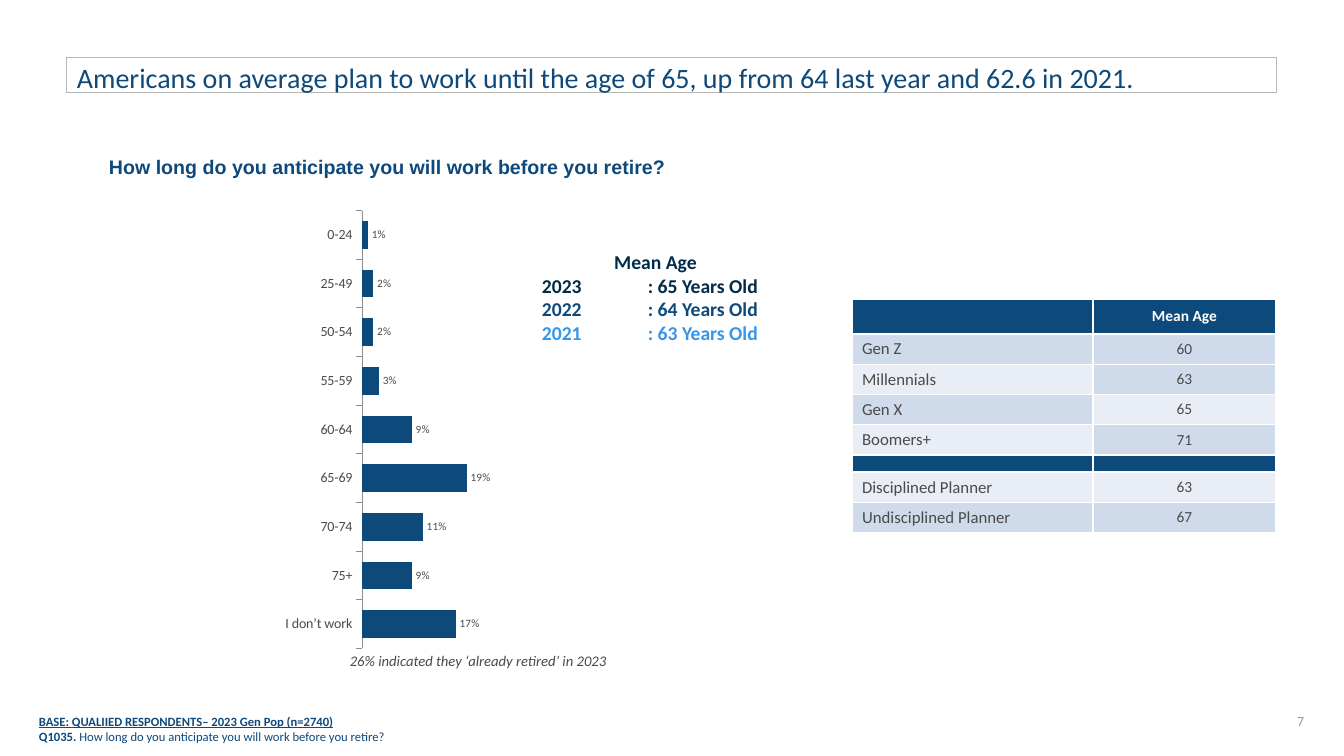
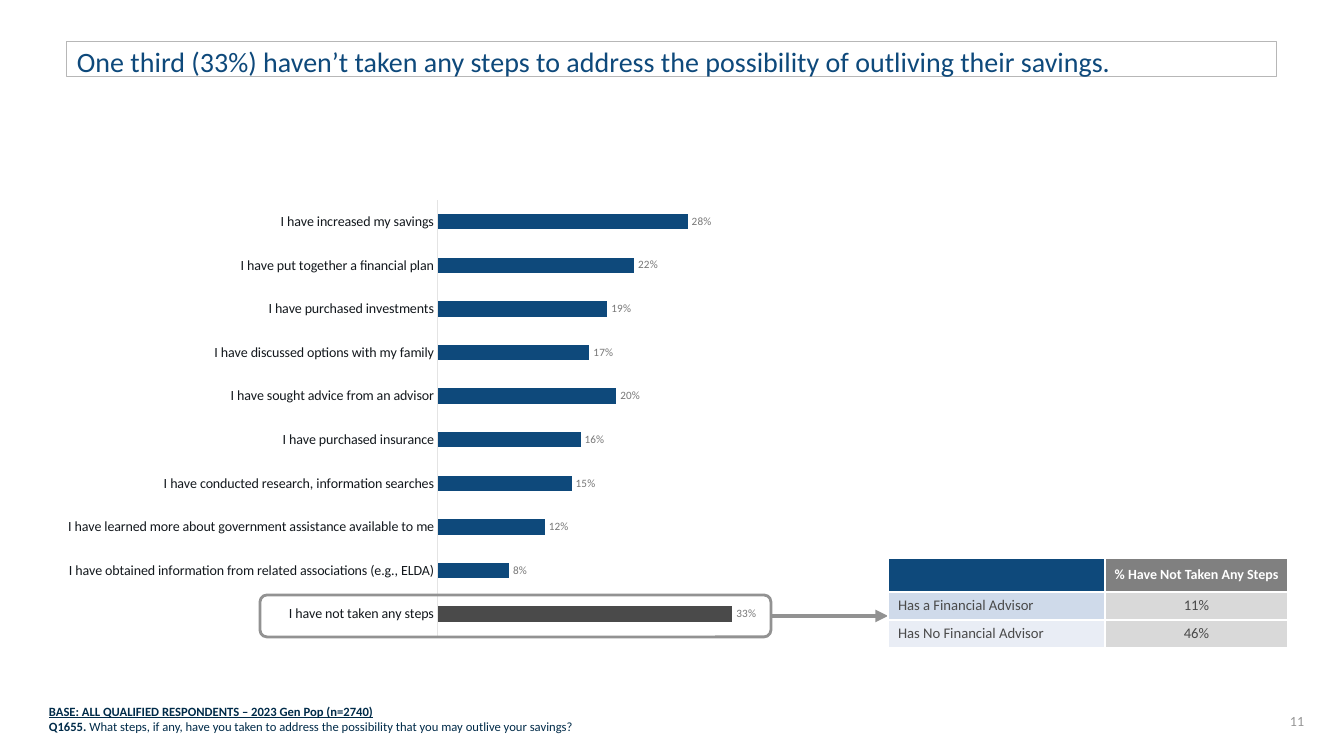
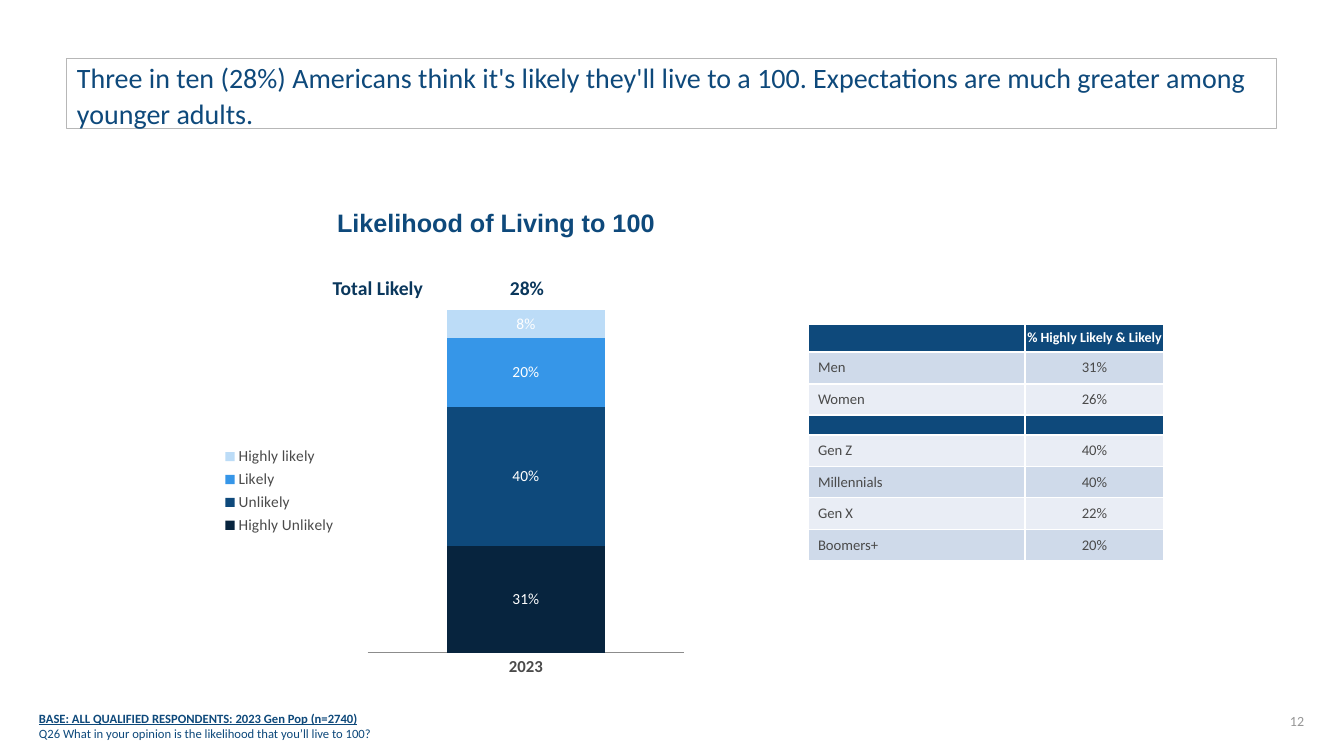
from lxml import etree
from pptx import Presentation
from pptx import util as u
from pptx.chart import data as chart_data
from pptx.dml import color
from pptx.enum import chart as ch
from pptx.enum import shapes, text
from pptx.oxml import ns

SCALE = 914400 / 100.8
SLIDE_W, SLIDE_H = 1344, 756
WHITE, BLUE, NAVY, SKY = "FFFFFF", "0E497B", "002B49", "3696E8"
TEXT_GREY, LINE_GREY, ARROW_GREY = "4A4A4A", "8C8C8C", "929292"
BANDS = ("E9EDF5", "CFDAEA")
EMPTY_CELL_SIZE = 4


def px(length):
    """Turn pixels into EMU."""
    return u.Emu(round(length * SCALE))


def place(box):
    """Turn a box in pixels into EMU."""
    return [px(length) for length in box]


def rgb(hex_colour):
    """Turn a hex string into a colour."""
    return color.RGBColor.from_string(hex_colour)


def paint(fill, hex_colour):
    """Fill with one solid colour."""
    fill.solid()
    fill.fore_color.rgb = rgb(hex_colour)


def set_font(font, size, hex_colour, bold=False, italic=False, name="Calibri"):
    """Set the face, size and colour of a font."""
    font.name, font.size, font.color.rgb = name, u.Pt(size), rgb(hex_colour)
    font.bold, font.italic = bold, italic


def add_lines(slide, box, lines, size, hex_colour, align=text.PP_ALIGN.LEFT,
              anchor=text.MSO_ANCHOR.TOP, **font):
    """Add a text box with a paragraph per line and return its paragraphs."""
    frame = slide.shapes.add_textbox(*place(box)).text_frame
    frame.word_wrap, frame.vertical_anchor = True, anchor
    frame.text = "\n".join(lines)
    for paragraph in frame.paragraphs:
        paragraph.alignment = align
        set_font(paragraph.font, size, hex_colour, **font)
    return frame.paragraphs


def add_heading(slide, box, words):
    """Add the framed slide heading."""
    frame = slide.shapes.add_shape(shapes.MSO_SHAPE.RECTANGLE, *place(box))
    frame.shadow.inherit = False
    frame.fill.background()
    frame.line.color.rgb, frame.line.width = rgb("B7B7B7"), u.Pt(0.75)
    body = frame.text_frame
    body.word_wrap, body.vertical_anchor = True, text.MSO_ANCHOR.TOP
    body.margin_left = body.margin_right = px(10)
    body.margin_top = body.margin_bottom = 0
    body.text = words
    heading = body.paragraphs[0]
    heading.alignment, heading.line_spacing = text.PP_ALIGN.LEFT, 1.07
    set_font(heading.font, 20, BLUE)


def add_footer(slide, box, base, code, question, hex_colour=BLUE, bold_code=True):
    """Add the base line and the survey question."""
    base_line, question_line = add_lines(
        slide, box, [base, ""], 9, hex_colour, anchor=text.MSO_ANCHOR.BOTTOM)
    base_line.font.bold = base_line.font.underline = True
    for words, bold in ((code + " ", bold_code), (question, False)):
        run = question_line.add_run()
        run.text, run.font.bold = words, bold


def add_frame(deck, heading, heading_top, heading_height, number):
    """Add a blank slide with its heading and page number."""
    slide = deck.slides.add_slide(deck.slide_layouts[6])
    add_heading(slide, (67, heading_top, 1210, heading_height), heading)
    add_lines(slide, (1214, 701, 100, 40), [number], 10, "969696",
              text.PP_ALIGN.RIGHT, text.MSO_ANCHOR.MIDDLE)
    return slide


def set_plot_box(chart, shares):
    """Fix the inner plot area as shares of the chart."""
    plot_area = chart.element.xpath("c:chart/c:plotArea")[0]
    for old in plot_area.findall(ns.qn("c:layout")):
        plot_area.remove(old)
    layout = etree.Element(ns.qn("c:layout"))
    plot_area.insert(0, layout)
    manual = etree.SubElement(layout, ns.qn("c:manualLayout"))
    settings = [("layoutTarget", "inner"), ("xMode", "edge"), ("yMode", "edge"),
                *zip("xywh", shares)]
    for tag, value in settings:
        etree.SubElement(manual, ns.qn("c:" + tag)).set("val", str(value))


def add_bars(slide, box, kind, categories, series, colours, plot_box, gap, top,
             axis_size, label_size, axis_colour=TEXT_GREY, label_colour=TEXT_GREY,
             axis_line=LINE_GREY, tick=ch.XL_TICK_MARK.NONE,
             label_position=ch.XL_LABEL_POSITION.OUTSIDE_END):
    """Add a percentage bar chart with value labels and a hidden value axis."""
    figures = chart_data.CategoryChartData(number_format="0%")
    figures.categories = categories
    for name, values in series:
        figures.add_series(name, values)
    chart = slide.shapes.add_chart(kind, *place(box), figures).chart
    chart.has_title = chart.has_legend = False
    set_font(chart.font, axis_size, TEXT_GREY)
    set_plot_box(chart, plot_box)

    axis = chart.category_axis
    axis.major_tick_mark, axis.minor_tick_mark = tick, ch.XL_TICK_MARK.NONE
    axis.format.line.color.rgb, axis.format.line.width = rgb(axis_line), u.Pt(0.75)
    set_font(axis.tick_labels.font, axis_size, axis_colour)
    scale = chart.value_axis
    scale.visible = scale.has_major_gridlines = False
    scale.minimum_scale, scale.maximum_scale = 0, top

    plot = chart.plots[0]
    plot.vary_by_categories, plot.gap_width = False, gap
    plot.has_data_labels = True
    labels = plot.data_labels
    labels.show_value, labels.position = True, label_position
    labels.number_format, labels.number_format_is_linked = "0%", False
    set_font(labels.font, label_size, label_colour)
    for bars, hex_colour in zip(plot.series, colours):
        paint(bars.format.fill, hex_colour)
    return chart


def style_cell(cell, words, fill, size, hex_colour, bold=False,
               align=text.PP_ALIGN.LEFT):
    """Write a table cell with white borders."""
    for side in "LRTB":
        border = etree.SubElement(cell._tc.get_or_add_tcPr(), ns.qn("a:ln" + side),
                                  w=str(u.Pt(1)))
        solid = etree.SubElement(border, ns.qn("a:solidFill"))
        etree.SubElement(solid, ns.qn("a:srgbClr"), val=WHITE)
    if fill:
        paint(cell.fill, fill)
    else:
        cell.fill.background()
    cell.text, cell.vertical_anchor = words, text.MSO_ANCHOR.MIDDLE
    paragraph = cell.text_frame.paragraphs[0]
    paragraph.alignment = align
    set_font(paragraph.font, size if words else EMPTY_CELL_SIZE, hex_colour, bold)


def add_grid(slide, left, top, widths, heights):
    """Add a plain table with the given column widths and row heights."""
    box = (left, top, sum(widths), sum(heights))
    table = slide.shapes.add_table(len(heights), len(widths), *place(box)).table
    table.first_row = table.horz_banding = False
    for column, width in zip(table.columns, widths):
        column.width = px(width)
    for row, height in zip(table.rows, heights):
        row.height = px(height)
    return table


def add_breakdown(slide, left, top, widths, heights, heading, rows, heading_size,
                  label_size, value_size, heading_fill=BLUE, value_fills=None):
    """Add a banded table of groups and values; an empty group is a divider."""
    table = add_grid(slide, left, top, widths, heights)
    center = text.PP_ALIGN.CENTER
    style_cell(table.cell(0, 0), "", BLUE, heading_size, WHITE)
    title = table.cell(0, 1)
    style_cell(title, heading, heading_fill, heading_size, WHITE, True, center)
    title.margin_left = title.margin_right = px(1)
    for index, (label, value) in enumerate(rows, 1):
        band = BANDS[index % 2] if label else BLUE
        value_band = value_fills[index - 1] if value_fills and label else band
        style_cell(table.cell(index, 0), label, band, label_size, TEXT_GREY)
        style_cell(table.cell(index, 1), value, value_band, value_size, TEXT_GREY,
                   align=center)


def add_mean_ages(slide, box):
    """Add the mean age of each year in two tabbed columns."""
    ages = [("2023", 65, NAVY), ("2022", 64, BLUE), ("2021", 63, SKY)]
    lines = ["Mean Age"] + [f"{year}\t: {age} Years Old" for year, age, _ in ages]
    title, *years = add_lines(slide, box, lines, 14, NAVY, bold=True)
    title.alignment = text.PP_ALIGN.CENTER
    for paragraph, (_, _, hex_colour) in zip(years, ages):
        paragraph.font.color.rgb = rgb(hex_colour)
        tabs = etree.Element(ns.qn("a:tabLst"))
        etree.SubElement(tabs, ns.qn("a:tab"), pos=str(px(106)), algn="l")
        paragraph._p.get_or_add_pPr().insert(0, tabs)


def add_callout(slide, box, arrow_end):
    """Outline a bar and point an arrow from it to the right."""
    left, top, width, height = box
    outline = slide.shapes.add_shape(shapes.MSO_SHAPE.ROUNDED_RECTANGLE, *place(box))
    outline.shadow.inherit = False
    outline.fill.background()
    outline.line.color.rgb, outline.line.width = rgb(ARROW_GREY), u.Pt(2)
    middle = top + height // 2
    arrow = slide.shapes.add_connector(
        shapes.MSO_CONNECTOR.STRAIGHT,
        *place((left + width, middle, arrow_end, middle)))
    arrow.line.color.rgb, arrow.line.width = rgb(ARROW_GREY), u.Pt(3)
    properties = arrow.element.spPr
    etree.SubElement(properties.find(ns.qn("a:ln")), ns.qn("a:tailEnd"),
                     type="triangle")
    etree.SubElement(properties, ns.qn("a:effectLst"))


def build_retirement_age(deck):
    """Build the slide on the planned retirement age."""
    slide = add_frame(
        deck, "Americans\u00a0on average plan to work until the age of 65, "
        "up from 64 last year and 62.6 in 2021.", 58, 35, "7")
    question = "How long do you anticipate you will work before you retire?"
    add_lines(slide, (99, 150, 672, 34), [question], 14, BLUE, bold=True, name="Arial")
    ages = ["0-24", "25-49", "50-54", "55-59", "60-64", "65-69", "70-74", "75+",
            "I don’t work"]
    shares = [0.01, 0.02, 0.02, 0.03, 0.09, 0.19, 0.11, 0.09, 0.17]
    chart = add_bars(
        slide, (115, 210, 687, 439), ch.XL_CHART_TYPE.BAR_CLUSTERED, ages,
        [("Series 1", shares)], [BLUE], (0.36, 0, 0.64, 1), 75, 0.8, 10, 8,
        tick=ch.XL_TICK_MARK.OUTSIDE)
    chart.category_axis.reverse_order = True
    note, = add_lines(slide, (340, 649, 332, 26),
                      ["26% indicated they ‘already retired’ in 2023"], 10.5,
                      TEXT_GREY, italic=True)
    note.line_spacing = 0.9
    add_mean_ages(slide, (532, 245, 247, 129))
    light, dark = BANDS
    add_breakdown(
        slide, 852, 299, (241, 183), (35, 30, 30, 30, 30, 17, 30, 30), "Mean Age",
        [("Gen Z", "60"), ("Millennials", "63"), ("Gen X", "65"), ("Boomers+", "71"),
         ("", ""), ("Disciplined Planner", "63"), ("Undisciplined Planner", "67")],
        11, 12, 11, value_fills=(dark, dark, light, dark, BLUE, light, dark))
    add_footer(slide, (29, 709, 948, 40),
               "BASE: QUALIIED RESPONDENTS– 2023 Gen Pop (n=2740)", "Q1035.", question)


def build_steps_taken(deck):
    """Build the slide on steps against outliving savings."""
    slide = add_frame(
        deck, "One third (33%) haven’t taken any steps to address the possibility "
        "of outliving their savings.", 42, 35, "11")
    steps = [
        ("I have increased my savings", 0.28),
        ("I have put together a financial plan", 0.22),
        ("I have purchased investments", 0.19),
        ("I have discussed options with my family", 0.17),
        ("I have sought advice from an advisor", 0.2),
        ("I have purchased insurance", 0.16),
        ("I have conducted research, information searches", 0.15),
        ("I have learned more about government assistance available to me", 0.12),
        ("I have obtained information from related associations (e.g., ELDA)", 0.08),
        ("I have not taken any steps", 0.33),
    ]
    names, shares = zip(*steps)
    chart = add_bars(
        slide, (67, 186, 727, 464), ch.XL_CHART_TYPE.BAR_CLUSTERED, names,
        [("Series 1", shares)], [BLUE], (0.51, 0.03, 0.43, 0.94), 182, 0.35, 10, 8,
        axis_colour="13181D", label_colour="777777", axis_line="E4E4E4")
    chart.category_axis.reverse_order = True
    no_steps = chart.plots[0].series[0].points[len(steps) - 1]
    paint(no_steps.format.fill, TEXT_GREY)
    add_callout(slide, (260, 595, 511, 42), 888)
    add_breakdown(
        slide, 888, 558, (217, 183), (34, 28, 28), "% Have Not Taken Any Steps",
        [("Has a Financial Advisor", "11%"), ("Has No Financial Advisor", "46%")],
        10, 10.5, 10.5, "808080", ("D9D9D9", "D9D9D9"))
    add_footer(slide, (39, 699, 849, 40),
               "BASE: ALL QUALIFIED RESPONDENTS – 2023 Gen Pop (n=2740)", "Q1655.",
               "What steps, if any, have you taken to address the possibility that "
               "you may outlive your savings?", NAVY)


def build_living_to_100(deck):
    """Build the slide on the likelihood of living to 100."""
    slide = add_frame(
        deck, "Three in ten (28%) Americans think it's likely they'll live to a 100. "
        "Expectations are much greater among younger adults.", 58, 71, "12")
    add_lines(slide, (245, 202, 502, 72), ["Likelihood of Living to 100"], 18, BLUE,
              text.PP_ALIGN.CENTER, bold=True, name="Arial")
    answers = [("Highly Unlikely", [0.31]), ("Unlikely", [0.4]), ("Likely", [0.2]),
               ("Highly likely", [0.08])]
    chart = add_bars(
        slide, (212, 272, 519, 438), ch.XL_CHART_TYPE.COLUMN_STACKED, ["2023"],
        answers, ["07243E", BLUE, SKY, "BCDCF7"], (0.3, 0.08, 0.61, 0.79), 100, 1,
        12, 11, label_colour=WHITE, label_position=ch.XL_LABEL_POSITION.CENTER)
    chart.plots[0].overlap = 100
    chart.category_axis.tick_labels.font.bold = True
    chart.has_legend = True
    chart.legend.position = ch.XL_LEGEND_POSITION.LEFT
    chart.legend.include_in_layout = False
    set_font(chart.legend.font, 11, TEXT_GREY)
    total = add_grid(slide, 245, 272, (188, 188), (33,))
    for column, (words, align) in enumerate(
            [("Total Likely", text.PP_ALIGN.RIGHT), ("28%", text.PP_ALIGN.CENTER)]):
        style_cell(total.cell(0, column), words, None, 14, "0A375C", True, align)
    add_breakdown(
        slide, 808, 324, (217, 139), (28, 32, 31, 20, 32, 31, 32, 31),
        "% Highly Likely & Likely",
        [("Men", "31%"), ("Women", "26%"), ("", ""), ("Gen Z", "40%"),
         ("Millennials", "40%"), ("Gen X", "22%"), ("Boomers+", "20%")],
        10, 10.5, 10.5)
    add_footer(slide, (29, 706, 500, 40),
               "BASE: ALL QUALIFIED RESPONDENTS: 2023 Gen Pop (n=2740)", "Q26",
               "What in your opinion is the likelihood that you’ll live to 100?",
               bold_code=False)


def main():
    """Build and save the three slides."""
    deck = Presentation()
    deck.slide_width, deck.slide_height = px(SLIDE_W), px(SLIDE_H)
    for build in (build_retirement_age, build_steps_taken, build_living_to_100):
        build(deck)
    deck.save("out.pptx")


if __name__ == "__main__":
    main()
